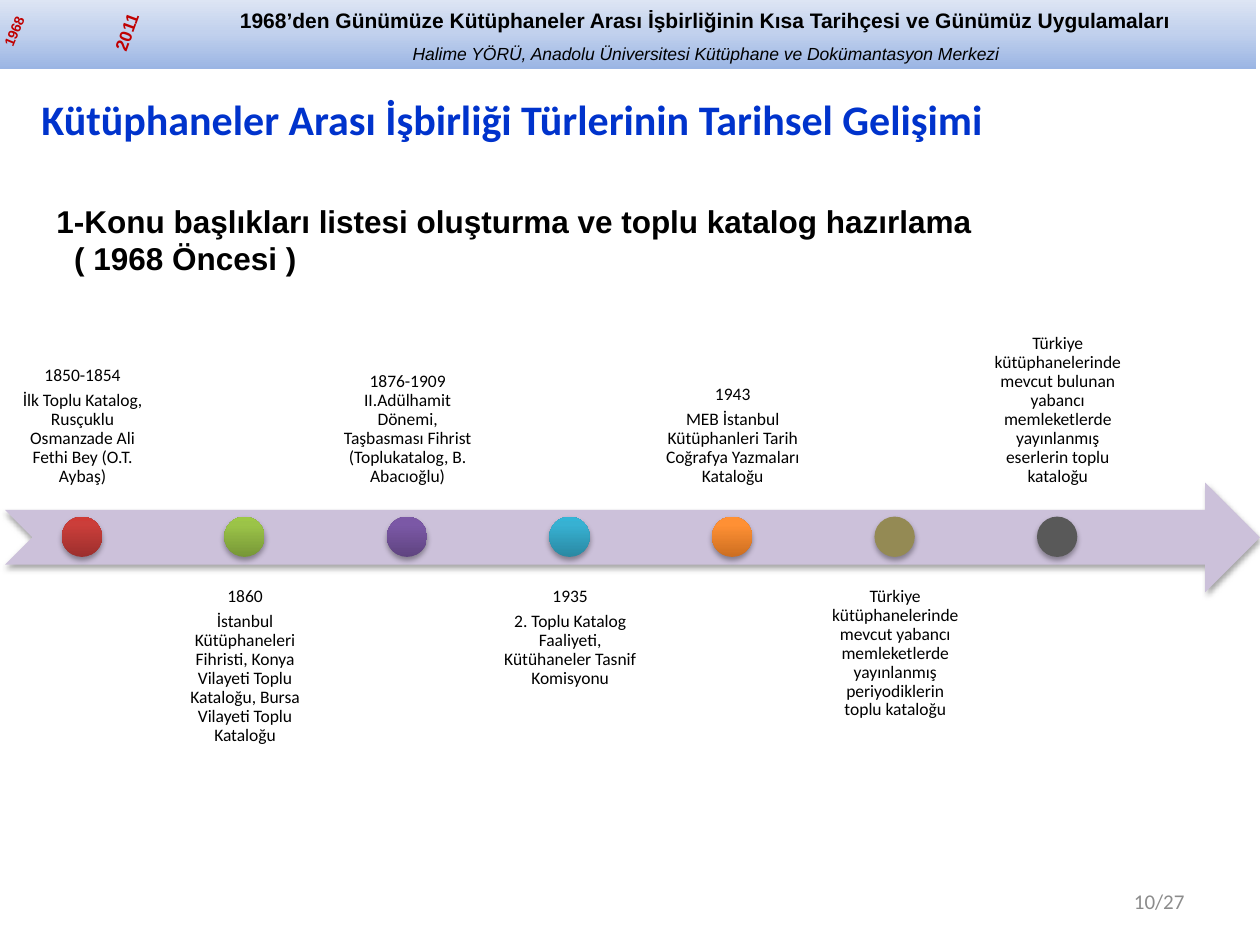
from dataclasses import dataclass

from lxml.etree import SubElement
from pptx import Presentation
from pptx.dml.color import RGBColor
from pptx.enum.shapes import MSO_SHAPE
from pptx.enum.text import MSO_ANCHOR, PP_ALIGN
from pptx.oxml.ns import qn
from pptx.shapes.autoshape import Shape
from pptx.slide import Slide
from pptx.util import Emu, Pt

EMU_PER_PX = 9144
PITCH = 129
LABEL_LEFT, LABEL_WIDTH, LABEL_HEIGHT = 4, 123, 129
UPPER_TOP, LOWER_TOP = 265, 458
DOT_LEFT, DOT_TOP, DOT_SIZE = 49, 410, 32


@dataclass(frozen=True)
class Box:
    left: int
    top: int
    width: int
    height: int

    def emu(self) -> list[Emu]:
        return [px(value) for value in (self.left, self.top, self.width, self.height)]


@dataclass(frozen=True)
class Style:
    size: int
    font: str = "Arial"
    color: str = "000000"
    bold: bool = False
    italic: bool = False
    align: PP_ALIGN = PP_ALIGN.LEFT


@dataclass(frozen=True)
class Event:
    lines: tuple[str, ...]
    colors: tuple[str, ...]


EVENTS = [
    Event(("1850-1854", "İlk Toplu Katalog, Rusçuklu Osmanzade Ali Fethi Bey (O.T. Aybaş)"),
          ("9C2F2D", "CB3E3A", "CE3B37")),
    Event(("1860", "İstanbul Kütüphaneleri Fihristi, Konya Vilayeti Toplu Kataloğu, "
           "Bursa Vilayeti Toplu Kataloğu"),
          ("779737", "9BC348", "9DC746")),
    Event(("1876-1909 II.Adülhamit Dönemi, Taşbasması Fihrist (Toplukatalog, B. Abacıoğlu)",),
          ("5F4480", "7B58A6", "7C57A8")),
    Event(("1935", "2. Toplu Katalog Faaliyeti, Kütühaneler Tasnif Komisyonu"),
          ("2A88A2", "37B1D2", "34B4D6")),
    Event(("1943", "MEB İstanbul Kütüphanleri Tarih Coğrafya Yazmaları Kataloğu"),
          ("CC6E20", "FF9034", "FF9136")),
    Event(("Türkiye kütüphanelerinde mevcut yabancı memleketlerde yayınlanmış "
           "periyodiklerin toplu kataloğu",), ("948A54",)),
    Event(("Türkiye kütüphanelerinde mevcut bulunan yabancı memleketlerde yayınlanmış "
           "eserlerin toplu kataloğu",), ("595959",)),
]


def px(value: int) -> Emu:
    return Emu(value * EMU_PER_PX)


def rgb(color: str) -> RGBColor:
    return RGBColor.from_string(color)


def add_shape(slide: Slide, kind: MSO_SHAPE, box: Box, colors: tuple[str, ...],
              middle: int = 80) -> Shape:
    shape = slide.shapes.add_shape(kind, *box.emu())
    shape.shadow.inherit = False
    shape.line.fill.background()
    if len(colors) == 1:
        shape.fill.solid()
        shape.fill.fore_color.rgb = rgb(colors[0])
        return shape
    shape.fill.gradient()
    shape.fill.gradient_angle = 90
    stops = shape.element.spPr.find(qn("a:gradFill")).find(qn("a:gsLst"))
    stops.clear()
    for position, color in zip((0, middle, 100), colors):
        stop = SubElement(stops, qn("a:gs"), pos=str(position * 1000))
        SubElement(stop, qn("a:srgbClr"), val=color)
    return shape


def add_shadow(shape: Shape) -> None:
    effects = shape.element.spPr.find(qn("a:effectLst"))
    shadow = SubElement(effects, qn("a:outerShdw"), blurRad=str(Pt(3.1)), dist=str(Pt(1.8)),
                        dir="5400000", rotWithShape="0")
    color = SubElement(shadow, qn("a:srgbClr"), val="000000")
    SubElement(color, qn("a:alpha"), val="35000")


def add_text(slide: Slide, box: Box, lines: list[tuple[str, Style]],
             anchor: MSO_ANCHOR = MSO_ANCHOR.TOP, wrap: bool = True,
             rotation: float = 0) -> Shape:
    shape = slide.shapes.add_textbox(*box.emu())
    shape.rotation = rotation
    frame = shape.text_frame
    frame.word_wrap = wrap
    frame.vertical_anchor = anchor
    for index, (text, style) in enumerate(lines):
        paragraph = frame.add_paragraph() if index else frame.paragraphs[0]
        paragraph.text = text
        paragraph.alignment = style.align
        font = paragraph.font
        font.size, font.name = Pt(style.size), style.font
        font.bold, font.italic = style.bold, style.italic
        font.color.rgb = rgb(style.color)
    return shape


def add_header(slide: Slide) -> None:
    add_shape(slide, MSO_SHAPE.RECTANGLE, Box(0, -4, 997, 59),
              ("9AB5E4", "C2D1ED", "E1E8F5"), middle=50)
    header = add_text(slide, Box(122, 1, 876, 56), [
        ("1968’den Günümüze Kütüphaneler Arası İşbirliğinin Kısa Tarihçesi ve Günümüz Uygulamaları",
         Style(12, bold=True, align=PP_ALIGN.CENTER)),
        ("Halime YÖRÜ, Anadolu Üniversitesi Kütüphane ve Dokümantasyon Merkezi",
         Style(10, italic=True, align=PP_ALIGN.CENTER)),
    ])
    header.text_frame.paragraphs[1].space_before = Pt(6)
    for year, box, size, rotation in (("1968", Box(-11, 13, 45, 24), 8, 292.1),
                                      ("2011", Box(75, 12, 51, 27), 10, 289.8)):
        style = Style(size, color="C00000", bold=True, align=PP_ALIGN.CENTER)
        add_text(slide, box, [(year, style)], wrap=False, rotation=rotation)


def add_event(slide: Slide, index: int, event: Event) -> None:
    offset = index * PITCH
    above = index % 2 == 0
    style = Style(10, "Calibri", align=PP_ALIGN.CENTER)
    box = Box(LABEL_LEFT + offset, UPPER_TOP if above else LOWER_TOP, LABEL_WIDTH, LABEL_HEIGHT)
    label = add_text(slide, box, [(line, style) for line in event.lines],
                     MSO_ANCHOR.BOTTOM if above else MSO_ANCHOR.TOP)
    frame = label.text_frame
    frame.margin_left = frame.margin_right = frame.margin_top = frame.margin_bottom = px(8)
    for paragraph in frame.paragraphs:
        paragraph.line_spacing = 0.9
        paragraph.space_after = Pt(3.5)
    dot = Box(DOT_LEFT + offset, DOT_TOP, DOT_SIZE, DOT_SIZE)
    add_shadow(add_shape(slide, MSO_SHAPE.OVAL, dot, event.colors))


def main() -> None:
    presentation = Presentation()
    presentation.slide_width, presentation.slide_height = px(1000), px(750)
    slide = presentation.slides.add_slide(presentation.slide_layouts[6])
    add_header(slide)
    add_text(slide, Box(717, 695, 233, 40),
             [("10/27", Style(12, "Calibri", "8C8C8C", align=PP_ALIGN.RIGHT))], MSO_ANCHOR.MIDDLE)
    heading = Style(18, bold=True)
    subtitle = add_text(slide, Box(35, 155, 890, 71), [
        ("1-Konu başlıkları listesi oluşturma ve toplu katalog hazırlama", heading),
        ("( 1968 Öncesi )", heading),
    ])
    subtitle.text_frame.paragraphs[1]._p.get_or_add_pPr().set("marL", str(px(14)))
    add_shadow(add_shape(slide, MSO_SHAPE.NOTCHED_RIGHT_ARROW, Box(4, 383, 996, 87), ("CCC1DA",)))
    for index, event in enumerate(EVENTS):
        add_event(slide, index, event)
    add_text(slide, Box(23, 78, 902, 33),
             [("Kütüphaneler Arası İşbirliği Türlerinin Tarihsel Gelişimi",
               Style(24, "Calibri", "0033CC", bold=True))], MSO_ANCHOR.MIDDLE)
    presentation.save("out.pptx")


if __name__ == "__main__":
    main()
